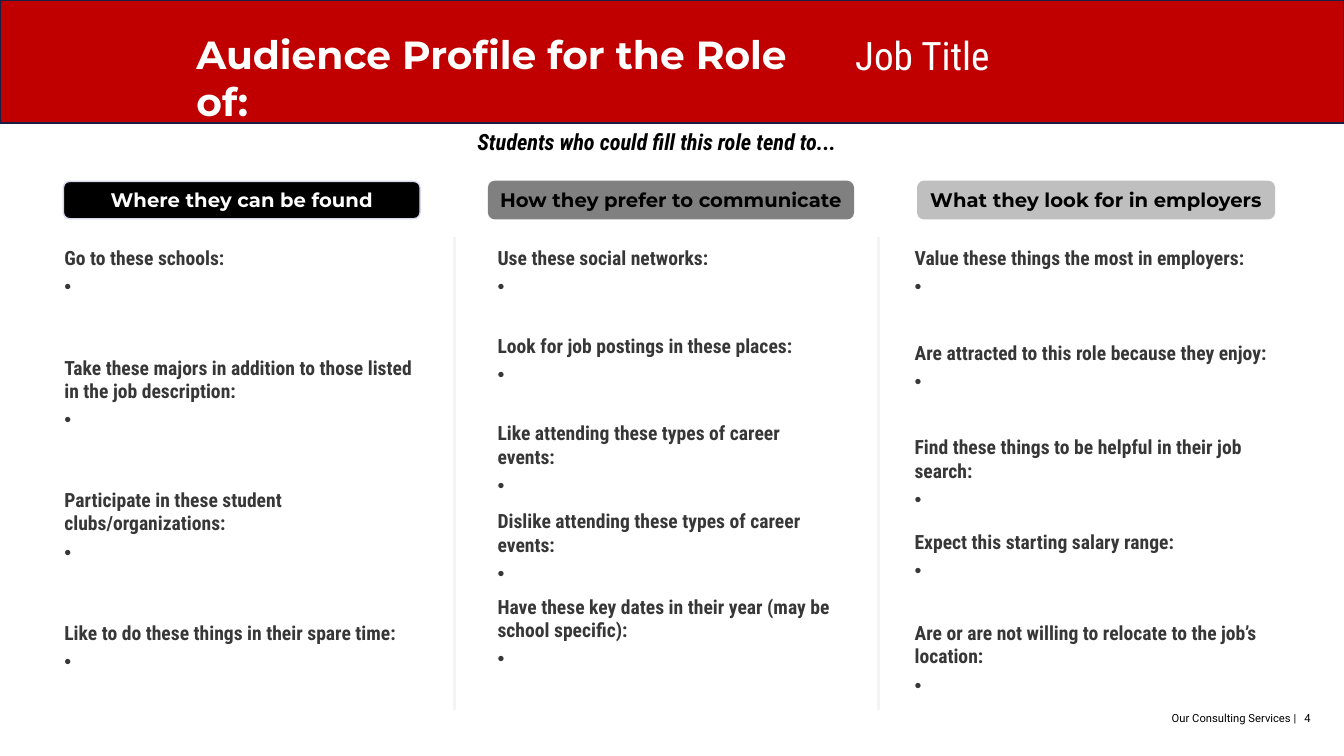
from lxml import etree
from pptx import Presentation
from pptx.dml.color import RGBColor
from pptx.enum.shapes import MSO_CONNECTOR, MSO_SHAPE
from pptx.enum.text import MSO_ANCHOR, MSO_AUTO_SIZE, PP_ALIGN
from pptx.oxml.ns import qn
from pptx.util import Inches, Pt

RED = RGBColor(0xC0, 0x00, 0x00)
NAVY = RGBColor(0x1C, 0x1D, 0x43)
WHITE = RGBColor(0xFF, 0xFF, 0xFF)
BLACK = RGBColor(0x00, 0x00, 0x00)
LAVENDER = RGBColor(0xD6, 0xD6, 0xEE)
GRAY = RGBColor(0x80, 0x80, 0x80)
SILVER = RGBColor(0xBF, 0xBF, 0xBF)
CHARCOAL = RGBColor(0x37, 0x37, 0x37)
PALE = RGBColor(0xF4, 0xF4, 0xF4)

HEADING_FONT = "Montserrat"
BODY_FONT = "Roboto Condensed"
FOOTER_FONT = "Roboto"

HEADERS = [
    ("Where they can be found", 0.63, 3.54, BLACK, LAVENDER, WHITE),
    ("How they prefer to communicate", 4.85, 3.62, GRAY, GRAY, BLACK),
    ("What they look for in employers", 9.11, 3.54, SILVER, SILVER, BLACK),
]

COLUMNS = [
    (0.54, 3.72, [
        (2.39, "Go to these schools:"),
        (3.48, "Take these majors in addition to those listed in the job description:"),
        (4.79, "Participate in these student clubs/organizations:"),
        (6.11, "Like to do these things in their spare time:"),
    ]),
    (4.84, 3.55, [
        (2.39, "Use these social networks:"),
        (3.26, "Look for job postings in these places:"),
        (4.13, "Like attending these types of career events:"),
        (5.0, "Dislike attending these types of career events:"),
        (5.85, "Have these key dates in their year (may be school specific):"),
    ]),
    (8.98, 3.8, [
        (2.39, "Value these things the most in employers:"),
        (3.33, "Are attracted to this role because they enjoy:"),
        (4.27, "Find these things to be helpful in their job search:"),
        (5.21, "Expect this starting salary range:"),
        (6.11, "Are or are not willing to relocate to the job’s location:"),
    ]),
]


def format_paragraph(paragraph, font_name, size, color, bold=False, italic=False,
                     alignment=PP_ALIGN.LEFT):
    paragraph.alignment = alignment
    for run in paragraph.runs:
        run.font.name = font_name
        run.font.size = Pt(size)
        run.font.color.rgb = color
        run.font.bold = bold
        run.font.italic = italic


def add_text(slide, text, left, top, width, height, **style):
    shape = slide.shapes.add_textbox(Inches(left), Inches(top), Inches(width), Inches(height))
    shape.text_frame.word_wrap = True
    shape.text_frame.text = text
    format_paragraph(shape.text_frame.paragraphs[0], **style)
    return shape


def add_block(slide, kind, left, top, width, height, fill, line):
    shape = slide.shapes.add_shape(kind, Inches(left), Inches(top), Inches(width), Inches(height))
    shape.shadow.inherit = False
    shape.fill.solid()
    shape.fill.fore_color.rgb = fill
    shape.line.color.rgb = line
    shape.line.width = Pt(1)
    return shape


def add_title(slide, text):
    banner = add_block(slide, MSO_SHAPE.RECTANGLE, 0, 0, 13.34, 1.22, RED, NAVY)
    title = slide.shapes.title
    banner._element.addnext(title._element)
    title.left, title.top = Inches(1.85), Inches(0.25)
    title.width, title.height = Inches(6.61), Inches(0.57)
    text_frame = title.text_frame
    text_frame.text = text
    text_frame.auto_size = MSO_AUTO_SIZE.NONE
    text_frame.vertical_anchor = MSO_ANCHOR.TOP
    format_paragraph(text_frame.paragraphs[0], HEADING_FONT, 28, WHITE, bold=True)


def add_header(slide, text, left, width, fill, line, color):
    shape = add_block(slide, MSO_SHAPE.ROUNDED_RECTANGLE, left, 1.8, width, 0.37, fill, line)
    shape.text_frame.word_wrap = False
    shape.text_frame.vertical_anchor = MSO_ANCHOR.MIDDLE
    shape.text_frame.text = text
    format_paragraph(shape.text_frame.paragraphs[0], HEADING_FONT, 14, color, bold=True,
                     alignment=PP_ALIGN.CENTER)


def add_bullet(paragraph):
    properties = paragraph._p.get_or_add_pPr()
    properties.set("marL", str(Inches(0.19)))
    properties.set("indent", str(Inches(-0.19)))
    etree.SubElement(properties, qn("a:buFont")).set("typeface", "Arial")
    etree.SubElement(properties, qn("a:buChar")).set("char", "•")


def add_prompt(slide, text, left, top, width):
    shape = add_text(slide, text, left, top, width, 0.63,
                     font_name=BODY_FONT, size=14, color=CHARCOAL, bold=True)
    answer = shape.text_frame.add_paragraph()
    answer.text = " "
    format_paragraph(answer, BODY_FONT, 14, CHARCOAL)
    for paragraph in shape.text_frame.paragraphs:
        paragraph.space_after = Pt(4)
    add_bullet(answer)


def add_divider(slide, left):
    connector = slide.shapes.add_connector(
        MSO_CONNECTOR.STRAIGHT, Inches(left), Inches(2.35), Inches(left), Inches(7.04))
    connector.line.color.rgb = PALE
    connector.line.width = Pt(2.25)
    etree.SubElement(connector._element.spPr, qn("a:effectLst"))


def add_footer_text(slide, text, left, width):
    shape = add_text(slide, text, left, 7.04, width, 0.2, font_name=FOOTER_FONT, size=8,
                     color=BLACK, alignment=PP_ALIGN.RIGHT)
    text_frame = shape.text_frame
    text_frame.margin_left = text_frame.margin_right = 0
    text_frame.margin_top = text_frame.margin_bottom = 0
    text_frame.paragraphs[0].line_spacing = 1.1


def main():
    presentation = Presentation()
    presentation.slide_width = Inches(13.34)
    presentation.slide_height = Inches(7.5)
    slide = presentation.slides.add_slide(presentation.slide_layouts[5])

    add_title(slide, "Audience Profile for the Role of:")
    add_text(slide, "Job Title", 8.39, 0.26, 3.11, 0.57,
             font_name=BODY_FONT, size=28, color=WHITE)
    add_text(slide, "Students who could fill this role tend to...", 3.22, 1.22, 6.6, 0.37,
             font_name=BODY_FONT, size=16, color=BLACK, bold=True, italic=True,
             alignment=PP_ALIGN.CENTER)
    for header in HEADERS:
        add_header(slide, *header)
    for left, width, prompts in COLUMNS:
        for top, text in prompts:
            add_prompt(slide, text, left, top, width)
    for left in (4.51, 8.72):
        add_divider(slide, left)
    add_footer_text(slide, "Our Consulting Services |", 10.74, 2.13)
    add_footer_text(slide, "4", 12.87, 0.14)

    presentation.save("out.pptx")


if __name__ == "__main__":
    main()
